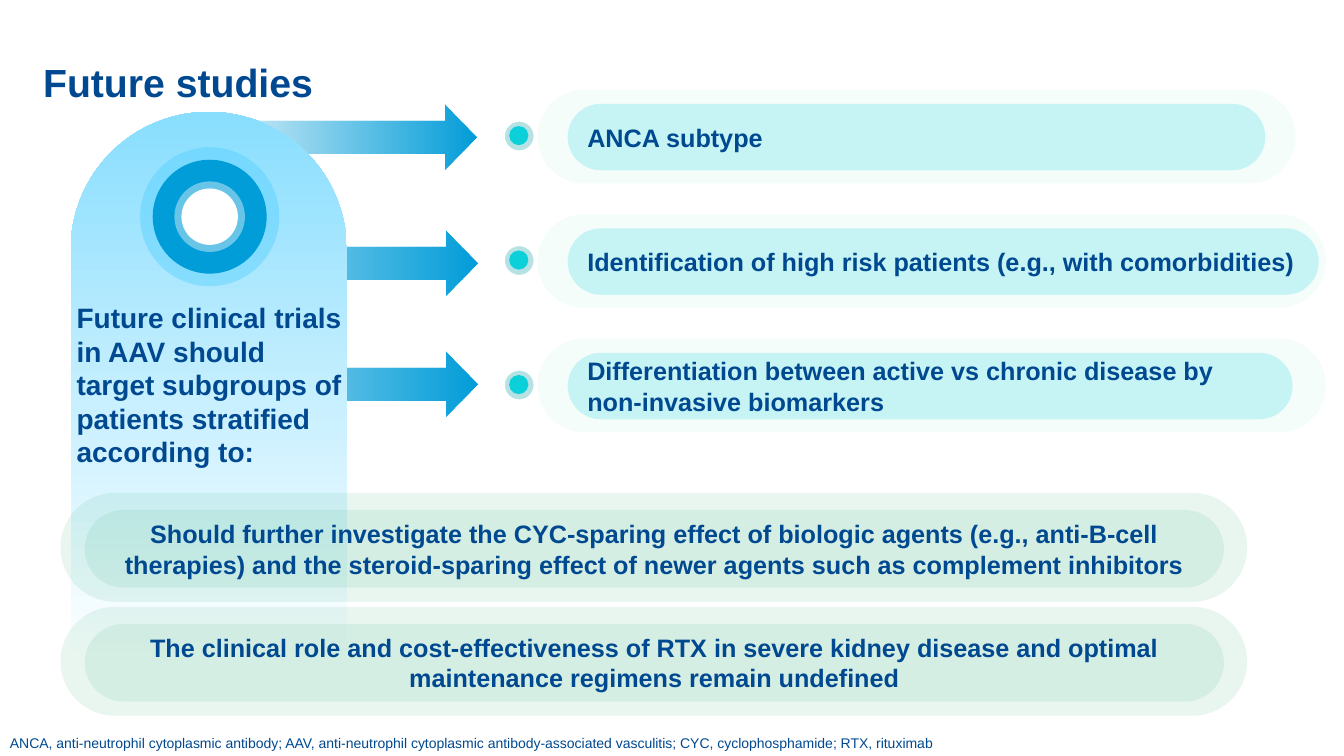
from pptx import Presentation
from pptx.dml.color import RGBColor
from pptx.enum.shapes import MSO_SHAPE
from pptx.enum.text import MSO_ANCHOR, PP_ALIGN
from pptx.oxml.ns import qn
from pptx.util import Inches, Pt
from lxml import etree

ARROW = MSO_SHAPE.RIGHT_ARROW
PILL = MSO_SHAPE.ROUNDED_RECTANGLE
ARCH = MSO_SHAPE.ROUND_2_SAME_RECTANGLE
OVAL = MSO_SHAPE.OVAL
TOP, MIDDLE, BOTTOM = MSO_ANCHOR.TOP, MSO_ANCHOR.MIDDLE, MSO_ANCHOR.BOTTOM
LEFT, CENTER = PP_ALIGN.LEFT, PP_ALIGN.CENTER

NAVY = RGBColor(0x00, 0x49, 0x90)
BLUE = RGBColor(0x00, 0x9D, 0xD9)
SKY = RGBColor(0x89, 0xDE, 0xFE)
HALO = RGBColor(0x4F, 0xCE, 0xFF)
CYAN = RGBColor(0x0B, 0xD0, 0xD9)
TEAL = RGBColor(0x08, 0x9C, 0xA2)
MINT = RGBColor(0x10, 0xCF, 0x9B)
GREEN = RGBColor(0x11, 0xA2, 0x60)
WHITE = RGBColor(0xFF, 0xFF, 0xFF)

ARROWS = [(1.71, 1.04, 3.02), (0.63, 2.29, 4.11), (0.63, 3.49, 4.11)]
TOPICS = [
    ("ANCA subtype", 7.52, 6.92),
    ("Identification of high risk patients (e.g., with comorbidities)", 7.82, 7.45),
    ("Differentiation between active vs chronic disease by\nnon-invasive biomarkers", 7.82, 7.19),
]
NOTES = [
    "Should further investigate the CYC-sparing effect of biologic agents "
    "(e.g., anti-B-cell therapies) and the steroid-sparing effect of newer "
    "agents such as complement inhibitors",
    "The clinical role and cost-effectiveness of RTX in severe kidney disease "
    "and optimal maintenance regimens remain undefined",
]
CLAIM = "Future clinical trials in AAV should target subgroups of patients stratified according to:"
TERMS = (
    "ANCA, anti-neutrophil cytoplasmic antibody; AAV, anti-neutrophil cytoplasmic "
    "antibody-associated vasculitis; CYC, cyclophosphamide; RTX, rituximab"
)


def fade(color, alpha):
    etree.SubElement(color, qn("a:alpha")).set("val", str(alpha * 1000))


def add_form(slide, kind, x, y, w, h, color=None, alpha=100):
    form = slide.shapes.add_shape(kind, Inches(x), Inches(y), Inches(w), Inches(h))
    form.shadow.inherit = False
    form.line.fill.background()
    if kind == PILL:
        form.adjustments[0] = 0.5
    if color is not None:
        form.fill.solid()
        form.fill.fore_color.rgb = color
        if alpha < 100:
            fade(form.fill._xPr.find(".//" + qn("a:srgbClr")), alpha)
    return form


def blend(form, start, end, angle):
    form.fill.gradient()
    form.fill.gradient_angle = angle
    for stop, color in zip(form.fill.gradient_stops, (start, end)):
        stop.color.rgb = color


def write(form, text, size, bold=True, align=LEFT, anchor=MIDDLE, pad=(0.1, 0.05)):
    frame = form.text_frame
    frame.word_wrap = True
    frame.vertical_anchor = anchor
    frame.margin_left = frame.margin_right = Inches(pad[0])
    frame.margin_top = frame.margin_bottom = Inches(pad[1])
    frame.text = text
    for para in frame.paragraphs:
        para.alignment = align
        para.font.name = "Arial"
        para.font.size = Pt(size)
        para.font.bold = bold
        para.font.color.rgb = NAVY


def add_text(slide, x, y, w, h, text, size, **style):
    box = slide.shapes.add_textbox(Inches(x), Inches(y), Inches(w), Inches(h))
    write(box, text, size, **style)
    return box


def add_arrow(slide, x, y, w):
    arrow = add_form(slide, ARROW, x, y, w, 0.64)
    blend(arrow, BLUE, BLUE, 0)
    fade(arrow.fill._xPr.find(".//" + qn("a:srgbClr")), 0)


def add_column(slide, x, y, w, h):
    column = add_form(slide, ARCH, x, y, w, h)
    column.adjustments[0] = 0.5
    column.adjustments[1] = 0
    blend(column, WHITE, SKY, 90)
    add_text(slide, x - 0.07, y + 1.8, w + 0.2, 1.85, CLAIM, 20, anchor=TOP, pad=(0.13, 0.07))


def add_ring(slide, x, y):
    for size, color, alpha in (
        (1.38, HALO, 41), (1.13, BLUE, 100), (0.7, WHITE, 41), (0.56, WHITE, 100),
    ):
        add_form(slide, OVAL, x - size / 2, y - size / 2, size, size, color, alpha)


def add_note(slide, x, y, w, text):
    add_form(slide, PILL, x, y, w, 1.08, GREEN, 9)
    inner = add_form(slide, PILL, x + 0.24, y + 0.17, w - 0.47, 0.77, GREEN, 9)
    write(inner, text, 18, align=CENTER)


def add_topic(slide, x, y, text, outer, inner):
    add_form(slide, PILL, x, y, outer, 0.93, MINT, 4)
    bar = add_form(slide, PILL, x + 0.3, y + 0.14, inner, 0.66, CYAN, 20)
    write(bar, text, 18)
    dot = add_form(slide, OVAL, x - 0.33, y + 0.31, 0.3, 0.3, TEAL, 29)
    dot.line.color.rgb = WHITE
    dot.line.width = Pt(1)
    add_form(slide, OVAL, x - 0.28, y + 0.36, 0.19, 0.19, CYAN)


def main():
    deck = Presentation()
    deck.slide_width, deck.slide_height = Inches(13.33), Inches(7.5)
    slide = deck.slides.add_slide(deck.slide_layouts[6])
    for arrow in ARROWS:
        add_arrow(slide, *arrow)
    add_text(slide, 0, 7.1, 12.32, 0.4, TERMS, 10, bold=False, anchor=BOTTOM)
    title = add_text(slide, 0.33, 0.58, 12.13, 0.53, "Future studies", 28, anchor=TOP)
    title.text_frame.paragraphs[0].line_spacing = 0.9
    add_column(slide, 0.7, 1.11, 2.74, 5.45)
    for i, note in enumerate(NOTES):
        add_note(slide, 0.6, 4.89 + i * 1.13, 11.77, note)
    for i, topic in enumerate(TOPICS):
        add_topic(slide, 5.33, 0.89 + i * 1.235, *topic)
    add_ring(slide, 2.08, 2.15)
    deck.save("out.pptx")


if __name__ == "__main__":
    main()
